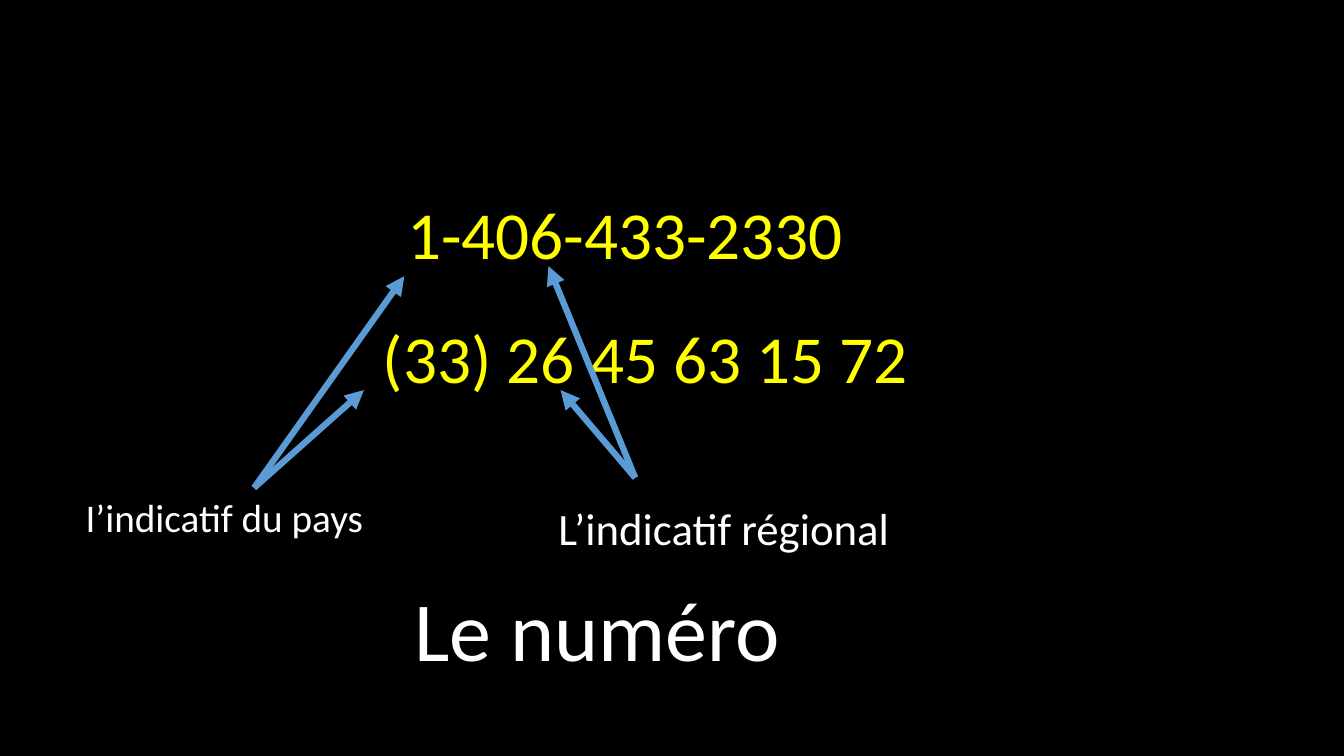
from lxml import etree
from pptx import Presentation
from pptx.dml.color import RGBColor
from pptx.enum.shapes import MSO_CONNECTOR
from pptx.enum.text import MSO_ANCHOR, PP_ALIGN
from pptx.oxml.ns import qn
from pptx.util import Inches, Pt

BLACK = RGBColor(0x00, 0x00, 0x00)
WHITE = RGBColor(0xFF, 0xFF, 0xFF)
YELLOW = RGBColor(0xFF, 0xFF, 0x00)
BLUE = RGBColor(0x5B, 0x9B, 0xD5)
LEFT, CENTER = PP_ALIGN.LEFT, PP_ALIGN.CENTER
TOP = MSO_ANCHOR.TOP
STRAIGHT = MSO_CONNECTOR.STRAIGHT
FONT = "Calibri"


def write_text(box, text, size, color, align):
    frame = box.text_frame
    frame.word_wrap = True
    frame.vertical_anchor = TOP
    frame.text = text
    para = frame.paragraphs[0]
    para.alignment = align
    para.font.name = FONT
    para.font.size = Pt(size)
    para.font.color.rgb = color


deck = Presentation()
deck.slide_width, deck.slide_height = Inches(13.33), Inches(7.5)
page = deck.slides.add_slide(deck.slide_layouts[5])
page.background.fill.solid()
page.background.fill.fore_color.rgb = BLACK

# Title below the diagram
title = page.shapes.title
title.left, title.top = Inches(3.46), Inches(5.68)
title.width, title.height = Inches(4.93), Inches(1.11)
write_text(title, "Le numéro", 60, WHITE, CENTER)

# Phone numbers and the labels of their parts
texts = [
    ("(33) 26 45 63 15 72", 2.74, 3.09, 7.33, 0.91, 48, YELLOW, CENTER),
    ("1-406-433-2330", 3.94, 1.86, 4.93, 0.91, 48, YELLOW, LEFT),
    ("I’indicatif du pays", 0.75, 4.84, 3.55, 0.57, 28, WHITE, LEFT),
    ("L’indicatif régional", 5.44, 4.92, 3.88, 0.64, 32, WHITE, LEFT),
]
for text, left, top, width, height, size, color, align in texts:
    box = page.shapes.add_textbox(
        Inches(left), Inches(top), Inches(width), Inches(height))
    write_text(box, text, size, color, align)

# Arrows from each label to both numbers
arrows = [
    ((2.52, 4.84), [(3.61, 3.87), (4.01, 2.74)]),
    ((6.3, 4.74), [(5.56, 3.87), (5.44, 2.64)]),
]
for (start_x, start_y), targets in arrows:
    for end_x, end_y in targets:
        arrow = page.shapes.add_connector(
            STRAIGHT, Inches(start_x), Inches(start_y),
            Inches(end_x), Inches(end_y))
        arrow.line.color.rgb = BLUE
        arrow.line.width = Pt(4.5)
        outline = arrow.line._get_or_add_ln()
        etree.SubElement(outline, qn("a:tailEnd"), type="triangle")
        etree.SubElement(arrow._element.spPr, qn("a:effectLst"))

deck.save("out.pptx")
